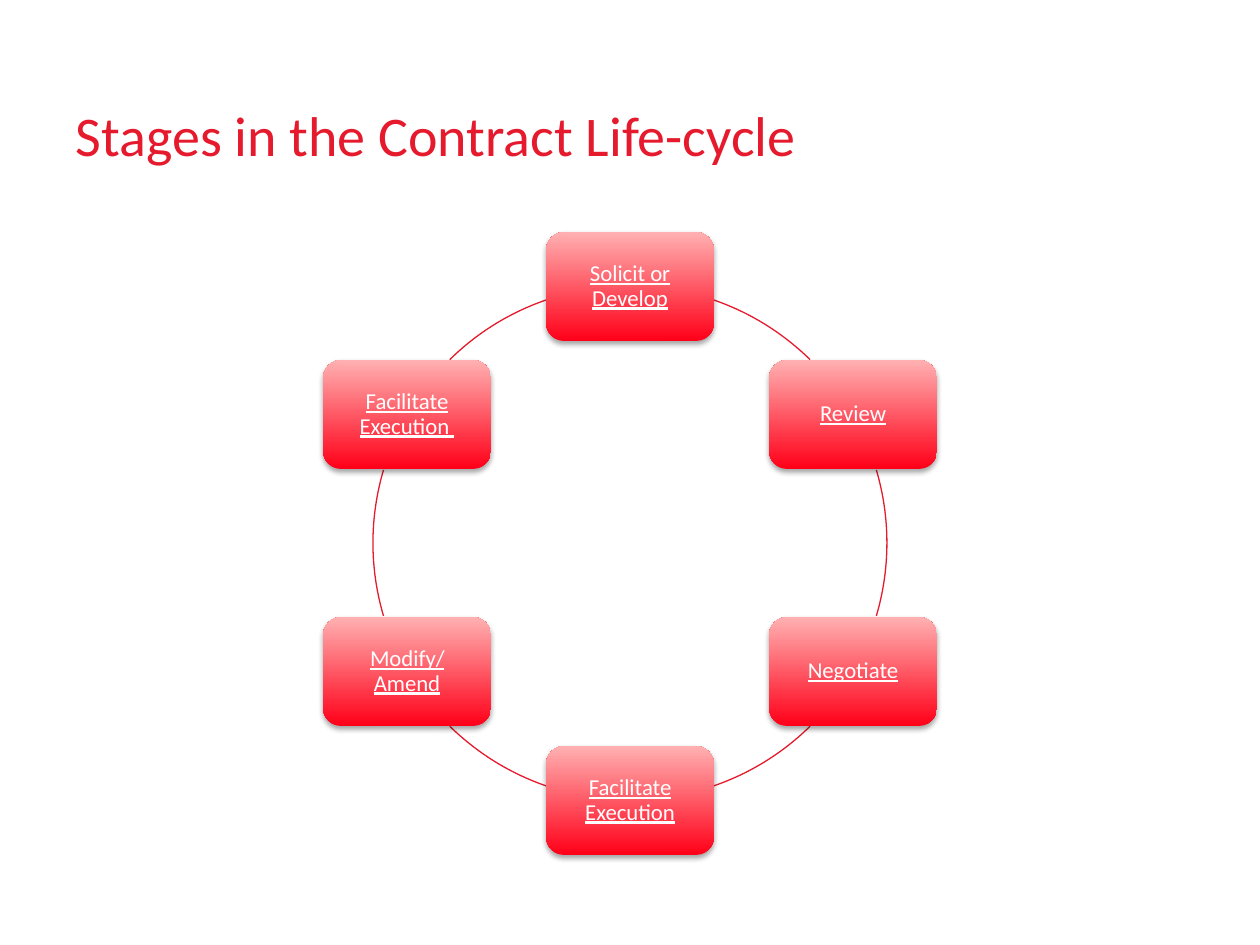
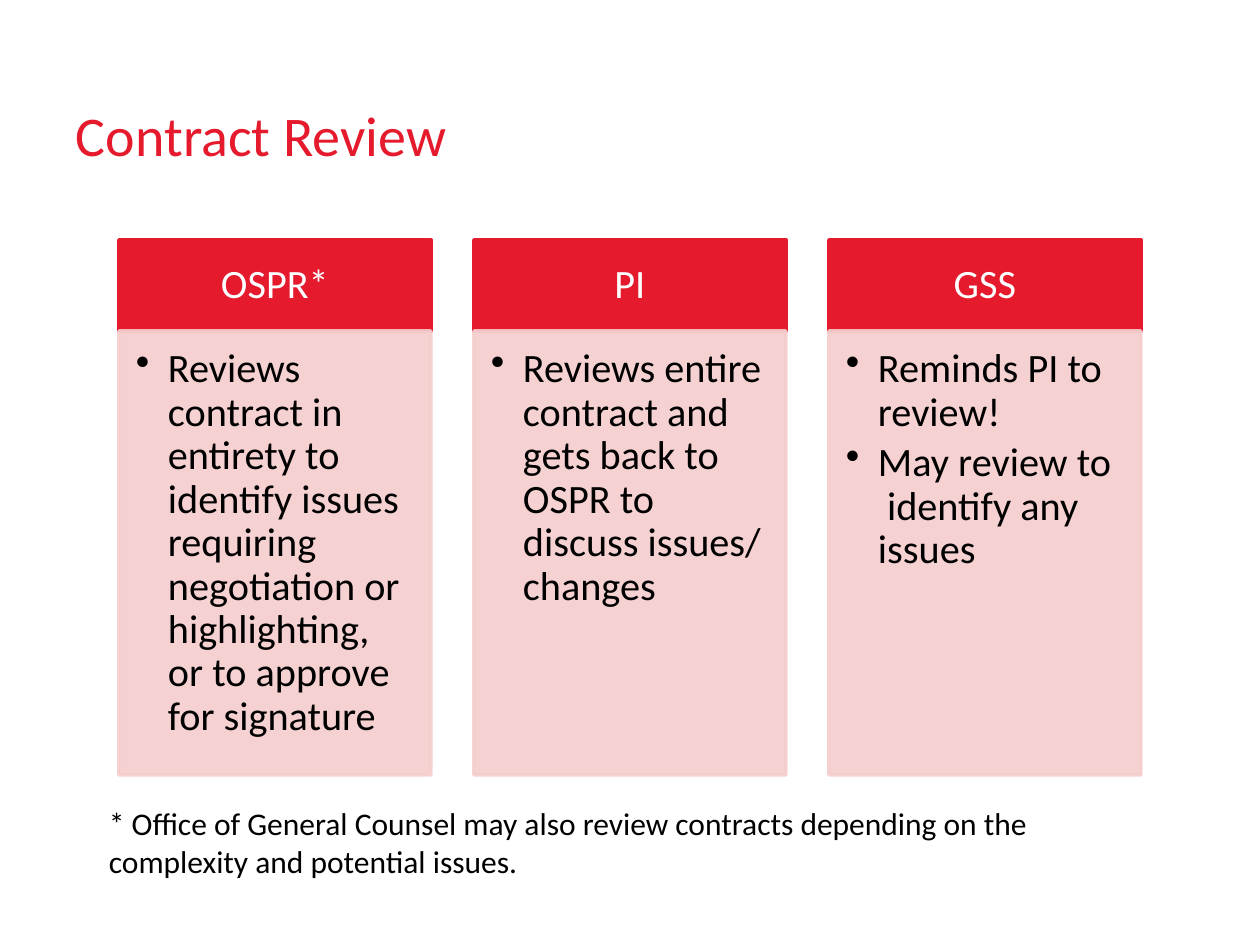
import math

from lxml import etree
from pptx import Presentation
from pptx.dml.color import RGBColor
from pptx.enum.shapes import MSO_SHAPE
from pptx.enum.text import MSO_ANCHOR, PP_ALIGN
from pptx.oxml.ns import qn
from pptx.util import Emu, Pt

ARC, RECTANGLE, ROUNDED = MSO_SHAPE.ARC, MSO_SHAPE.RECTANGLE, MSO_SHAPE.ROUNDED_RECTANGLE
TOP, MIDDLE, BOTTOM = MSO_ANCHOR.TOP, MSO_ANCHOR.MIDDLE, MSO_ANCHOR.BOTTOM
LEFT, CENTER = PP_ALIGN.LEFT, PP_ALIGN.CENTER

PX = 914400 / 126
FONT = "Calibri"
RED, BRIGHT_RED, LIGHT_RED = "E51A2D", "FF0018", "FFB1B2"
PINK, WHITE, BLACK = "F5CDCD", "FFFFFF", "000000"
hex_color = RGBColor.from_string


def px(*lengths):
    """Turn pixel lengths into a list of EMU."""
    return [Emu(round(length * PX)) for length in lengths]


def write(box, texts, size, color, anchor=TOP, align=LEFT, insets=(13, 6, 13, 6),
          spacing=None, underline=None, bullets=False):
    """Fill a box with one paragraph per text; insets run left, top, right, bottom."""
    frame = box.text_frame
    frame.word_wrap = True
    frame.vertical_anchor = anchor
    (frame.margin_left, frame.margin_top,
     frame.margin_right, frame.margin_bottom) = px(*insets)
    for number, text in enumerate(texts):
        para = frame.add_paragraph() if number else frame.paragraphs[0]
        para.alignment = align
        para.line_spacing = spacing
        if bullets:
            indent = px(32)[0]
            properties = para._p.get_or_add_pPr()
            properties.set("marL", str(indent))
            properties.set("indent", str(-indent))
            para.space_after = Pt(4)
            etree.SubElement(properties, qn("a:buChar"), char="•")
        span = para.add_run()
        span.text = text
        span.font.name = FONT
        span.font.size = Pt(size)
        span.font.underline = underline
        span.font.color.rgb = hex_color(color)


deck = Presentation()
deck.slide_width, deck.slide_height = px(1260, 945)

pages = []
for title in ("Stages in the Contract Life-cycle", "Contract Review"):
    page = deck.slides.add_slide(deck.slide_layouts[6])
    title_box = page.shapes.add_textbox(*px(63, 16, 901, 158))
    write(title_box, [title], 32, RED, anchor=BOTTOM, spacing=Pt(34))
    pages.append(page)
cycle_page, review_page = pages

# Life-cycle ring: angles in degrees, clockwise from the right
CENTER_X, CENTER_Y, RADIUS = 630, 543, 257
STAGE_WIDTH, STAGE_HEIGHT = 168, 109
STAGES = ["Solicit or Develop", "Review", "Negotiate",
          "Facilitate Execution", "Modify/Amend", "Facilitate Execution "]
ARCS = [(289, 314.5), (343.5, 16.5), (45.5, 71),
        (109, 134.5), (163.5, 196.5), (225.5, 251)]

for start, end in ARCS:
    arc = cycle_page.shapes.add_shape(
        ARC, *px(CENTER_X - RADIUS, CENTER_Y - RADIUS, 2 * RADIUS, 2 * RADIUS))
    arc.adjustments[0] = start * 0.6
    arc.adjustments[1] = end * 0.6
    arc.shadow.inherit = False
    arc.fill.background()
    arc.line.color.rgb = hex_color(RED)
    arc.line.width = Pt(0.75)

for number, stage in enumerate(STAGES):
    angle = math.radians(60 * number - 90)
    left = round(CENTER_X + RADIUS * math.cos(angle) - STAGE_WIDTH / 2)
    top = round(CENTER_Y + RADIUS * math.sin(angle) - STAGE_HEIGHT / 2)
    box = cycle_page.shapes.add_shape(ROUNDED, *px(left, top, STAGE_WIDTH, STAGE_HEIGHT))
    box.fill.gradient()
    box.fill.gradient_angle = 90
    for stop, color, position in zip(box.fill.gradient_stops, (BRIGHT_RED, LIGHT_RED), (0, 1)):
        stop.color.rgb = hex_color(color)
        stop.position = position
    box.line.fill.background()
    box.shadow.inherit = False
    effects = box.element.spPr.find(qn("a:effectLst"))
    shadow = etree.SubElement(effects, qn("a:outerShdw"), blurRad=str(Pt(3.1)),
                              dist=str(Pt(1.8)), dir="5400000", rotWithShape="0")
    shadow_color = etree.SubElement(shadow, qn("a:srgbClr"), val=BLACK)
    etree.SubElement(shadow_color, qn("a:alpha"), val="35000")
    write(box, [stage], 13, WHITE, anchor=MIDDLE, align=CENTER,
          insets=(11, 11, 11, 11), spacing=0.9, underline=True)

# Review columns
COLUMN_LEFT, COLUMN_STEP, COLUMN_WIDTH = 119, 355, 312
HEADER_TOP, HEADER_HEIGHT, BODY_HEIGHT = 240, 91, 444
REVIEWERS = [
    ("OSPR*", ["Reviews contract in entirety to identify issues requiring negotiation "
               "or highlighting, or to approve for signature"]),
    ("PI", ["Reviews entire contract and gets back to OSPR to discuss issues/ changes"]),
    ("GSS", ["Reminds PI to review!", "May review to  identify any issues"]),
]

for number, (reviewer, duties) in enumerate(REVIEWERS):
    left = COLUMN_LEFT + number * COLUMN_STEP
    header = review_page.shapes.add_shape(
        RECTANGLE, *px(left, HEADER_TOP, COLUMN_WIDTH, HEADER_HEIGHT))
    body = review_page.shapes.add_shape(
        RECTANGLE, *px(left, HEADER_TOP + HEADER_HEIGHT, COLUMN_WIDTH, BODY_HEIGHT))
    for box, color in ((header, RED), (body, PINK)):
        box.shadow.inherit = False
        box.fill.solid()
        box.fill.fore_color.rgb = hex_color(color)
        box.line.color.rgb = hex_color(color)
        box.line.width = Pt(2)
    for body_color in body.element.spPr.iter(qn("a:srgbClr")):
        etree.SubElement(body_color, qn("a:alpha"), val="90000")
    write(header, [reviewer], 23, WHITE, anchor=MIDDLE, align=CENTER,
          insets=(23, 13, 23, 13), spacing=0.9)
    write(body, duties, 23, BLACK, insets=(17, 17, 23, 25), spacing=0.9, bullets=True)

footnote = review_page.shapes.add_textbox(*px(96, 798, 1068, 89))
write(footnote, ["* Office of General Counsel may also review contracts depending on the "
                 "complexity and potential issues."], 18, BLACK)

deck.save("out.pptx")
